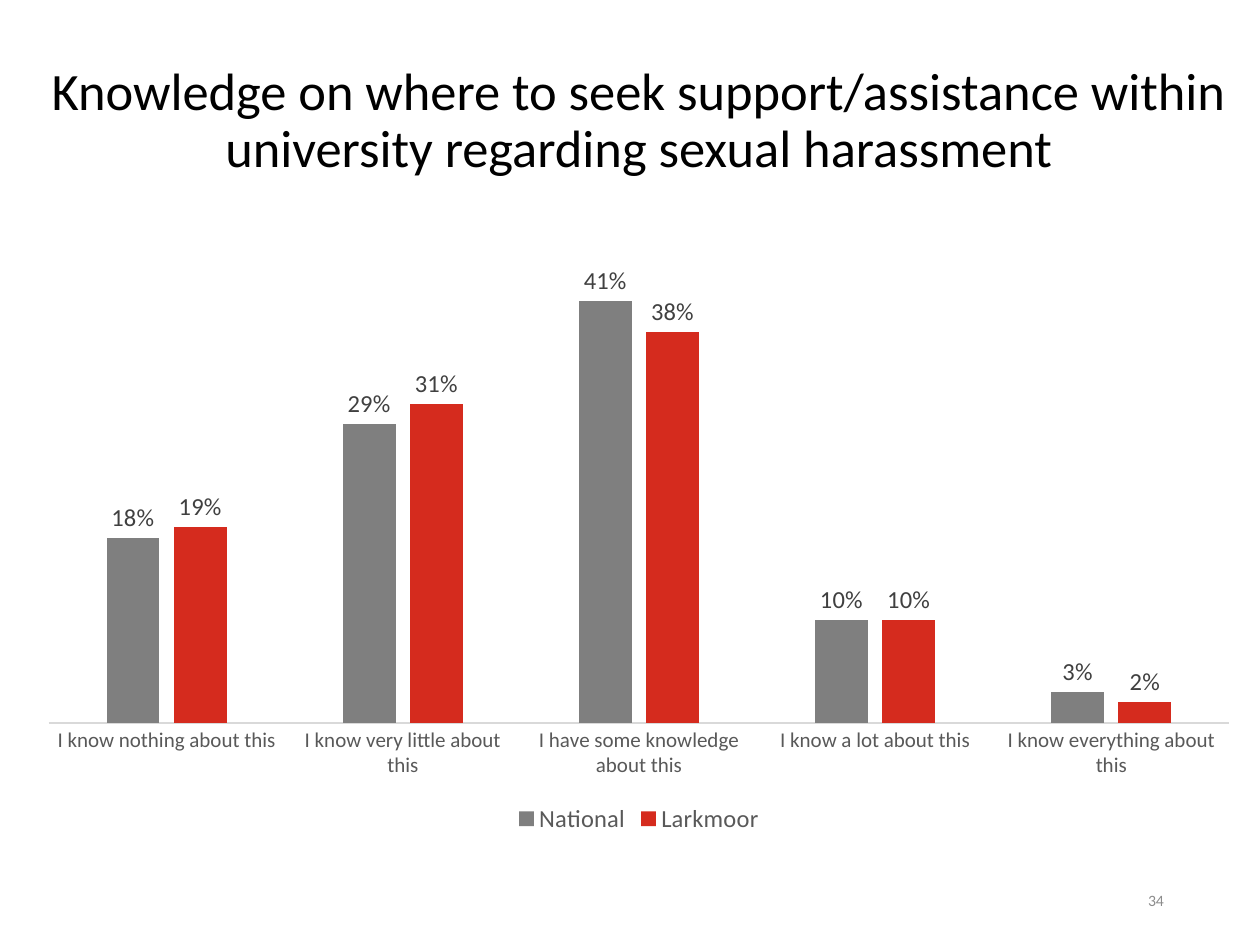
from dataclasses import dataclass

import pptx
import pptx.chart.data
import pptx.dml.color
import pptx.enum.chart
import pptx.enum.text
import pptx.util

EMU_PER_PX = 914400 / 126
FONT = "Calibri"
PERCENT = "0%"
COLORS = {
    "title": "000000",
    "national": "7F7F7F",
    "university": "D52B1E",
    "value": "404040",
    "axis_text": "595959",
    "axis_line": "D9D9D9",
    "number": "8C8C8C",
}
CATEGORIES = [
    "I know nothing about this",
    "I know very little about this",
    "I have some knowledge about this",
    "I know a lot about this",
    "I know everything about this",
]


@dataclass(frozen=True)
class Box:
    left: int
    top: int
    width: int
    height: int

    def emu(self) -> list[int]:
        return [px(n) for n in (self.left, self.top, self.width, self.height)]


@dataclass(frozen=True)
class Series:
    name: str
    color: str
    values: tuple[float, ...]


SERIES = [
    Series("National", "national", (0.18, 0.29, 0.41, 0.10, 0.03)),
    Series("Larkmoor", "university", (0.19, 0.31, 0.38, 0.10, 0.02)),
]


def px(length: int) -> int:
    return round(length * EMU_PER_PX)


def rgb(name: str) -> pptx.dml.color.RGBColor:
    return pptx.dml.color.RGBColor.from_string(COLORS[name])


def style_font(font, size: int, color: str) -> None:
    font.name = FONT
    font.size = pptx.util.Pt(size)
    font.color.rgb = rgb(color)


def write_text(shape, box: Box, text: str, size: int, color: str, alignment) -> None:
    shape.left, shape.top, shape.width, shape.height = box.emu()
    frame = shape.text_frame
    frame.word_wrap = True
    frame.auto_size = pptx.enum.text.MSO_AUTO_SIZE.NONE
    frame.vertical_anchor = pptx.enum.text.MSO_ANCHOR.MIDDLE
    frame.margin_left = frame.margin_right = px(9)
    frame.margin_top = frame.margin_bottom = px(5)
    paragraph = frame.paragraphs[0]
    paragraph.alignment = alignment
    paragraph.line_spacing = 0.9
    run = paragraph.add_run()
    run.text = text
    style_font(run.font, size, color)


def style_axes(chart) -> None:
    category_axis = chart.category_axis
    category_axis.major_tick_mark = pptx.enum.chart.XL_TICK_MARK.NONE
    category_axis.format.line.color.rgb = rgb("axis_line")
    category_axis.format.line.width = pptx.util.Pt(0.75)
    style_font(category_axis.tick_labels.font, 12, "axis_text")
    value_axis = chart.value_axis
    value_axis.visible = False
    value_axis.has_major_gridlines = False
    value_axis.minimum_scale = 0
    value_axis.maximum_scale = 0.45


def style_series(plot_series, color: str) -> None:
    plot_series.format.fill.solid()
    plot_series.format.fill.fore_color.rgb = rgb(color)
    plot_series.invert_if_negative = False
    labels = plot_series.data_labels
    labels.show_value = True
    labels.number_format = PERCENT
    labels.number_format_is_linked = False
    labels.position = pptx.enum.chart.XL_LABEL_POSITION.OUTSIDE_END
    style_font(labels.font, 14, "value")


def add_knowledge_chart(slide, box: Box) -> None:
    data = pptx.chart.data.CategoryChartData(number_format=PERCENT)
    data.categories = CATEGORIES
    for series in SERIES:
        data.add_series(series.name, series.values)
    chart = slide.shapes.add_chart(
        pptx.enum.chart.XL_CHART_TYPE.COLUMN_CLUSTERED, *box.emu(), data
    ).chart
    style_font(chart.font, 14, "title")
    chart.has_title = False
    chart.has_legend = True
    chart.legend.position = pptx.enum.chart.XL_LEGEND_POSITION.BOTTOM
    chart.legend.include_in_layout = False
    style_font(chart.legend.font, 14, "axis_text")
    style_axes(chart)
    plot = chart.plots[0]
    plot.gap_width = 219
    plot.overlap = -27
    plot.vary_by_categories = False
    for plot_series, series in zip(plot.series, SERIES):
        style_series(plot_series, series.color)


def main() -> None:
    presentation = pptx.Presentation()
    presentation.slide_width = px(1260)
    presentation.slide_height = px(945)
    slide = presentation.slides.add_slide(presentation.slide_layouts[5])
    write_text(
        slide.shapes.title,
        Box(24, 76, 1230, 92),
        "Knowledge on where to seek support/assistance within "
        "university regarding sexual harassment",
        30,
        "title",
        pptx.enum.text.PP_ALIGN.CENTER,
    )
    add_knowledge_chart(slide, Box(24, 248, 1230, 591))
    number_box = Box(890, 876, 283, 50)
    write_text(
        slide.shapes.add_textbox(*number_box.emu()),
        number_box,
        "34",
        9,
        "number",
        pptx.enum.text.PP_ALIGN.RIGHT,
    )
    presentation.save("out.pptx")


if __name__ == "__main__":
    main()
